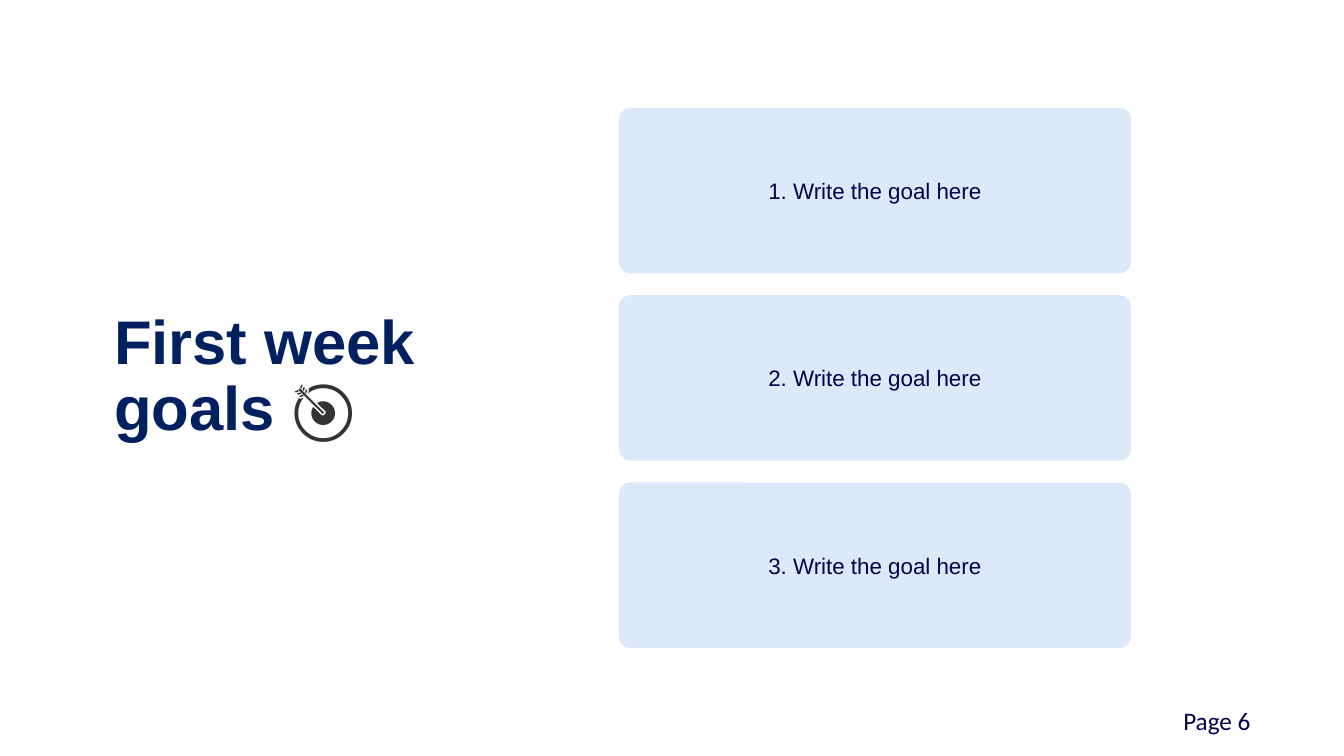
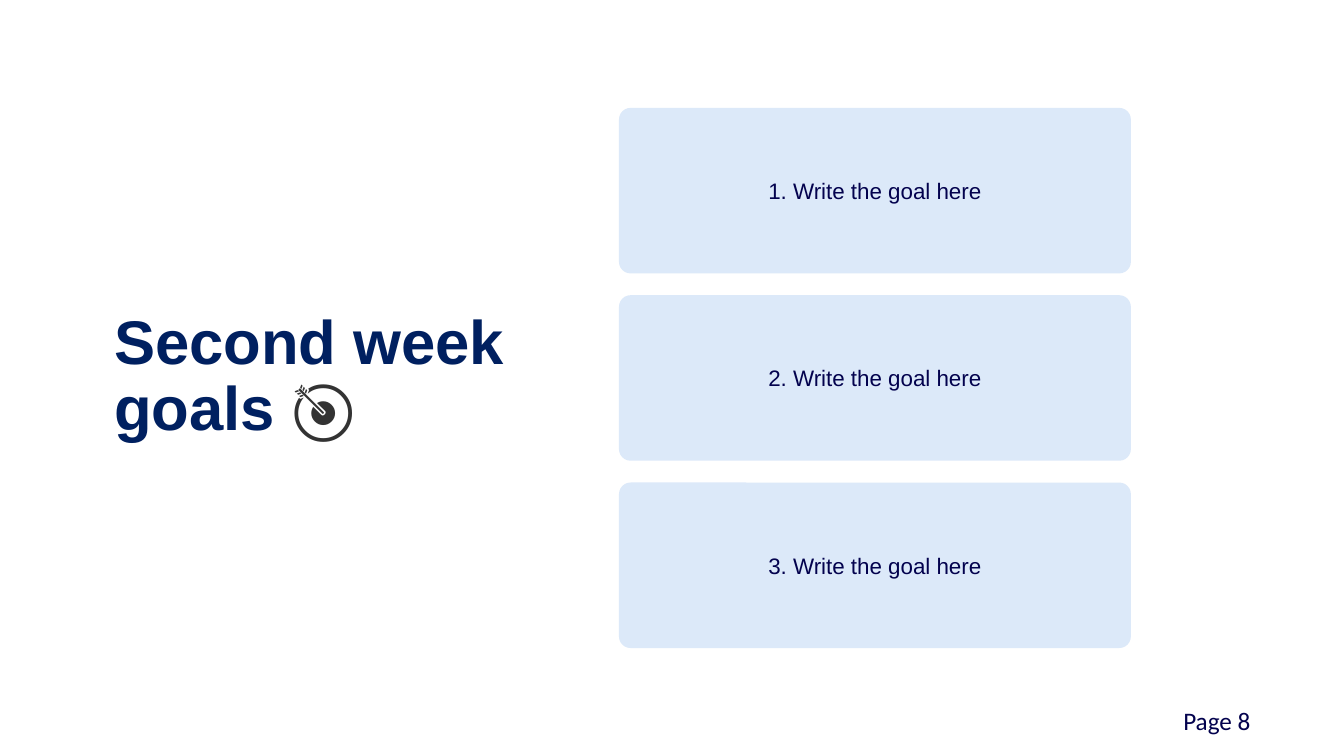
from pptx import Presentation
from pptx.dml.color import RGBColor
from pptx.enum.shapes import MSO_SHAPE
from pptx.enum.text import MSO_ANCHOR, MSO_AUTO_SIZE, PP_ALIGN
from pptx.util import Cm, Pt

ROUNDED = MSO_SHAPE.ROUNDED_RECTANGLE
MIDDLE = MSO_ANCHOR.MIDDLE
NO_FIT = MSO_AUTO_SIZE.NONE
LEFT, CENTER = PP_ALIGN.LEFT, PP_ALIGN.CENTER

NAVY = RGBColor(0x00, 0x20, 0x60)
INK = RGBColor(0x03, 0x02, 0x4E)
CHARCOAL = RGBColor(0x33, 0x33, 0x33)
PALE_BLUE = RGBColor(0xDC, 0xE9, 0xF9)

TITLE_FONT = {"name": "Arial", "size": Pt(44), "bold": True}
ICON_FONT = {"name": "Cabin", "size": Pt(44), "bold": False}
CARD_FONT = {"name": "Arial", "size": Pt(16)}
PAGE_FONT = {"name": "Calibri", "size": Pt(18)}

CARDS_BOX = (Cm(15.6), Cm(2.72), Cm(12.9), Cm(13.61))
CARD_GAP = Cm(0.55)
PAGE_BOX = (Cm(29.57), Cm(17.65), Cm(3), Cm(1.02))

GOALS = [f"{n}. Write the goal here" for n in (1, 2, 3)]
SLIDES = [
    ("First week goals ", Cm(8.81), 6),
    ("Second week goals ", Cm(10.9), 8),
]


def add_run(p, text, font, color):
    """Append a formatted run to a paragraph."""
    r = p.add_run()
    r.text = text
    for key, value in font.items():
        setattr(r.font, key, value)
    r.font.color.rgb = color


def place_title(slide, text, box):
    """Place the title with its target icon in the given box."""
    sp = slide.shapes.title
    sp.left, sp.top, sp.width, sp.height = box
    tf = sp.text_frame
    tf.word_wrap, tf.auto_size, tf.vertical_anchor = True, NO_FIT, MIDDLE
    p = tf.paragraphs[0]
    p.alignment, p.line_spacing = LEFT, 0.9
    add_run(p, text, TITLE_FONT, NAVY)
    add_run(p, "🎯", ICON_FONT, CHARCOAL)


def add_page_label(slide, number, box):
    """Write the page label in the given box."""
    tf = slide.shapes.add_textbox(*box).text_frame
    tf.word_wrap = True
    add_run(tf.paragraphs[0], f"Page {number}", PAGE_FONT, INK)


def add_goal_cards(slide, goals, box):
    """Stack one card per goal evenly in the given box."""
    left, top, width, height = box
    card_h = (height - CARD_GAP * (len(goals) - 1)) // len(goals)
    for i, goal in enumerate(goals):
        y = top + i * (card_h + CARD_GAP)
        sp = slide.shapes.add_shape(ROUNDED, left, y, width, card_h)
        sp.adjustments[0] = 0.07
        sp.shadow.inherit = False
        sp.fill.solid()
        sp.fill.fore_color.rgb = PALE_BLUE
        sp.line.fill.background()
        tf = sp.text_frame
        tf.word_wrap, tf.vertical_anchor = True, MIDDLE
        p = tf.paragraphs[0]
        p.alignment = CENTER
        add_run(p, goal, CARD_FONT, INK)


def add_goals_slide(prs, title, title_w, number):
    """Add a weekly goals slide."""
    slide = prs.slides.add_slide(prs.slide_layouts[5])
    place_title(slide, title, (Cm(2.62), Cm(6.88), title_w, Cm(5.26)))
    add_page_label(slide, number, PAGE_BOX)
    add_goal_cards(slide, GOALS, CARDS_BOX)


def main():
    """Build and save the presentation."""
    prs = Presentation()
    prs.slide_width, prs.slide_height = Cm(33.87), Cm(19.05)
    for title, title_w, number in SLIDES:
        add_goals_slide(prs, title, title_w, number)
    prs.save("out.pptx")


if __name__ == "__main__":
    main()
